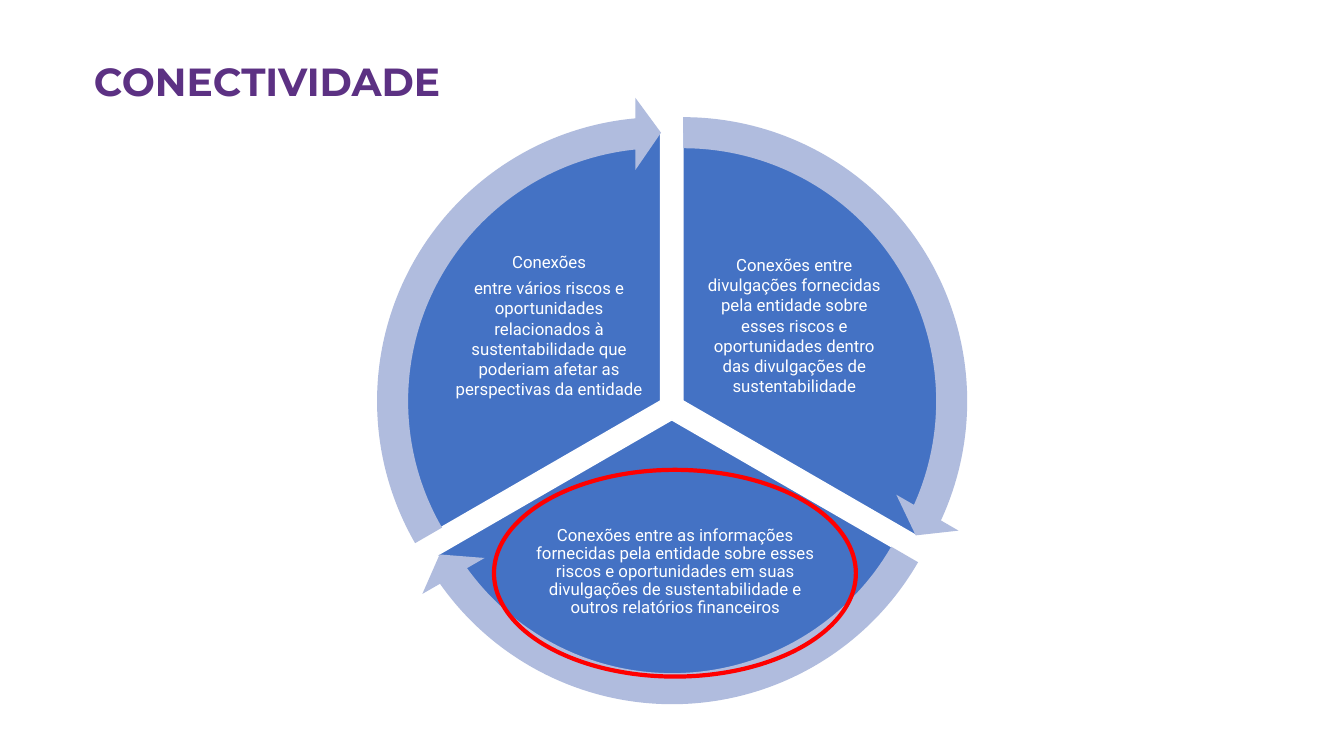
from pptx import Presentation
from pptx import util as u
from pptx.dml import color
from pptx.enum import shapes, text

PURPLE, BLUE, LILAC, WHITE, RED = "5C3183", "4472C4", "B0BCDE", "FFFFFF", "FF0000"
PIE_SIZE, ARROW_SIZE = 13.64, 15.34
ARROW_OFFSET = 0.84
HEAD_ANGLE = 3.275

# Pie left and top, start and end angle, text box, line spacing, paragraphs
SECTORS = [
    ((10.39, 3.28), (162, 18), (17.58, 6.17, 4.88, 4.06), 1.0,
     ["Conexões entre divulgações fornecidas pela entidade sobre esses riscos e "
      "oportunidades dentro das divulgações de sustentabilidade"]),
    ((10.11, 3.76), (18, 90), (13.36, 12.62, 7.32, 3.58), 0.9,
     ["Conexões entre as informações fornecidas pela entidade sobre esses riscos e "
      "oportunidades em suas divulgações de sustentabilidade e outros relatórios "
      "financeiros"]),
    ((9.83, 3.28), (90, 162), (11.4, 6.17, 4.88, 4.06), 1.0,
     ["Conexões",
      "entre vários riscos e oportunidades relacionados à sustentabilidade que "
      "poderiam afetar as perspectivas da entidade"]),
]


def rgb(value):
    return color.RGBColor.from_string(value)


def set_format(target, values):
    for name, value in values.items():
        setattr(target, name, value)


class PageBuilder:
    def __init__(self, deck):
        self.page = deck.slides.add_slide(deck.slide_layouts[5])
        self.diagram = self.page.shapes.add_group_shape()
        self.title_font = {"name": "Montserrat", "size": u.Pt(28), "bold": True}
        self.body_font = {"name": "Roboto", "size": u.Pt(12), "bold": False}

    def title(self, words, bounds):
        box = self.page.shapes.title
        set_format(box, dict(zip(("left", "top", "width", "height"), map(u.Cm, bounds))))
        set_format(box.text_frame, {"vertical_anchor": text.MSO_ANCHOR.TOP,
                                    "auto_size": text.MSO_AUTO_SIZE.NONE})
        para = box.text_frame.paragraphs[0]
        para.alignment = text.PP_ALIGN.LEFT
        self.span(para, words, self.title_font, PURPLE)

    def span(self, para, words, font, ink):
        span = para.add_run()
        span.text = words
        set_format(span.font, font)
        span.font.color.rgb = rgb(ink)

    def shape(self, parent, kind, bounds, fill=None, line=None, weight=1, angles=()):
        shape = parent.shapes.add_shape(kind, *map(u.Cm, bounds))
        shape.shadow.inherit = False
        for index, value in enumerate(angles):
            shape.adjustments[index] = value
        if fill:
            shape.fill.solid()
            shape.fill.fore_color.rgb = rgb(fill)
        else:
            shape.fill.background()
        if line:
            shape.line.color.rgb = rgb(line)
            shape.line.width = u.Pt(weight)
        else:
            shape.line.fill.background()

    def pie(self, corner, angles):
        self.shape(self.diagram, shapes.MSO_SHAPE.PIE, (*corner, PIE_SIZE, PIE_SIZE),
                   BLUE, WHITE, angles=angles)

    def arrow(self, corner, angles):
        """Draw the arrow that runs round the rim of the pie at this corner."""
        start, end = angles
        left, top = (place - ARROW_OFFSET for place in corner)
        self.shape(self.diagram, shapes.MSO_SHAPE.CIRCULAR_ARROW,
                   (left, top, ARROW_SIZE, ARROW_SIZE), LILAC,
                   angles=(0.051, HEAD_ANGLE, end - HEAD_ANGLE, start, 0.059))

    def label(self, bounds, spacing, paragraphs):
        frame = self.diagram.shapes.add_textbox(*map(u.Cm, bounds)).text_frame
        set_format(frame, {"word_wrap": True, "vertical_anchor": text.MSO_ANCHOR.MIDDLE})
        set_format(frame, {f"margin_{side}": u.Cm(0.04)
                           for side in ("left", "right", "top", "bottom")})
        for index, words in enumerate(paragraphs):
            para = frame.add_paragraph() if index else frame.paragraphs[0]
            set_format(para, {"alignment": text.PP_ALIGN.CENTER,
                              "line_spacing": spacing, "space_after": u.Pt(4.2)})
            self.span(para, words, self.body_font, WHITE)

    def highlight(self, bounds):
        self.shape(self.page, shapes.MSO_SHAPE.OVAL, bounds, line=RED, weight=3)


def main():
    deck = Presentation()
    set_format(deck, {"slide_width": u.Cm(33.87), "slide_height": u.Cm(19.05)})
    builder = PageBuilder(deck)
    builder.title("CONECTIVIDADE", (2.11, 1.32, 24.16, 2.49))
    for corner, angles, bounds, spacing, paragraphs in SECTORS:
        builder.pie(corner, angles)
        builder.label(bounds, spacing, paragraphs)
    for corner, angles, *_ in SECTORS:
        builder.arrow(corner, angles)
    builder.highlight((12.45, 11.84, 9.12, 5.21))
    deck.save("out.pptx")


if __name__ == "__main__":
    main()
